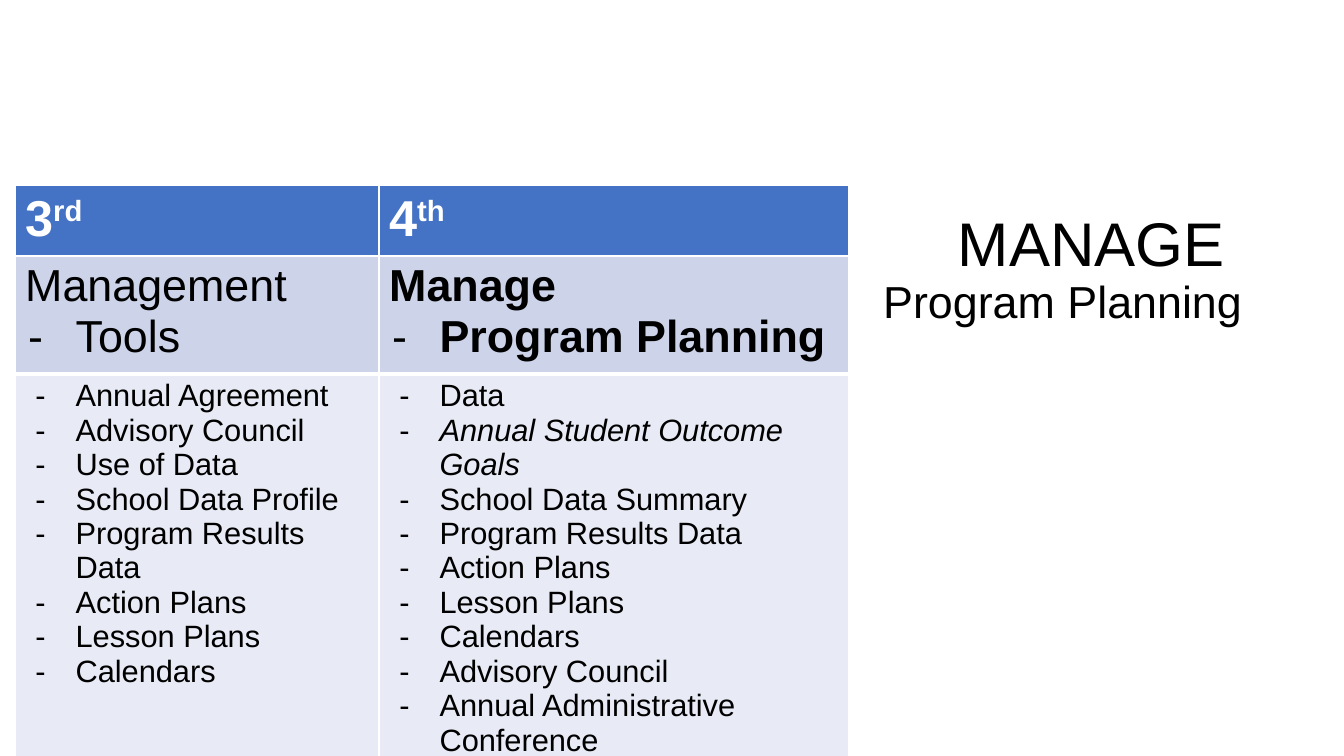
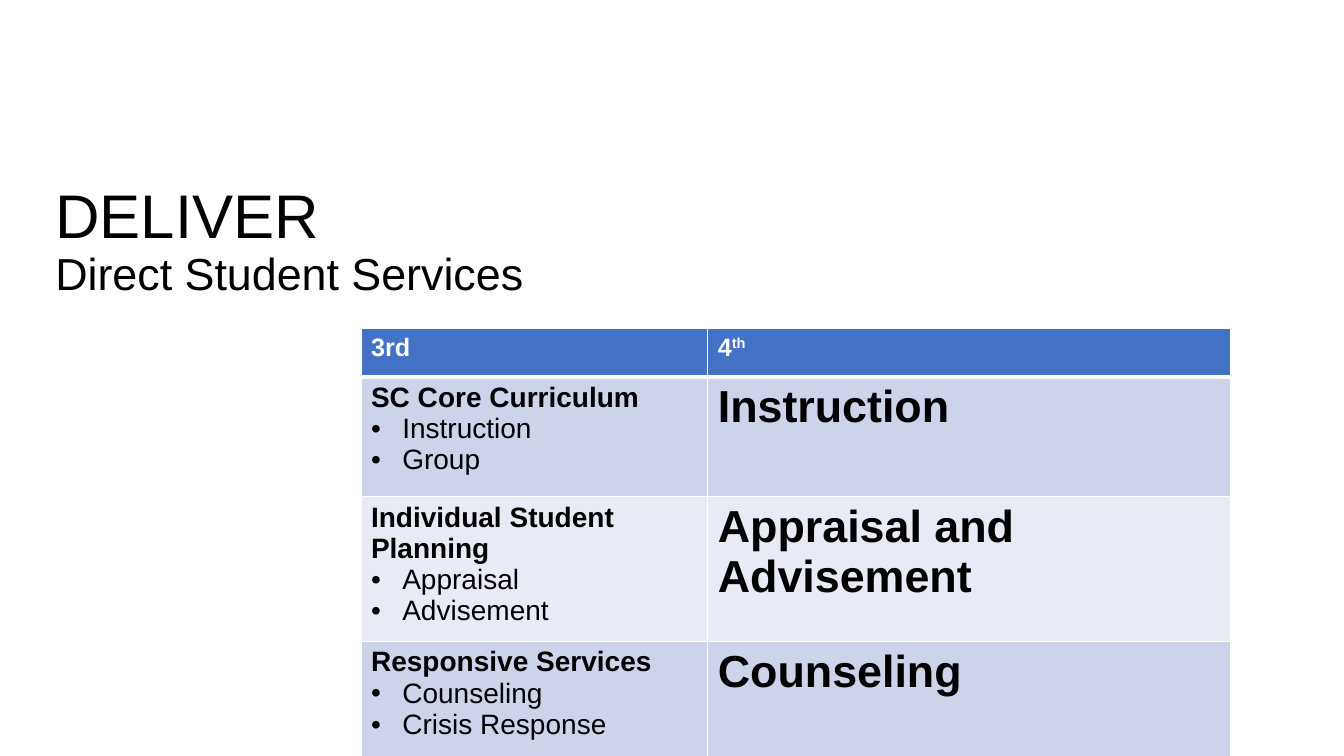
"""Build two slides comparing the third and fourth editions of a program model."""
from pptx import Presentation
from pptx.dml.color import RGBColor
from pptx.enum.text import MSO_ANCHOR, PP_ALIGN
from pptx.oxml.ns import qn
from pptx.util import Inches, Pt
from lxml.etree import SubElement

COLORS = {"text": "000000", "header": "4472C4", "band": "CDD4EA",
          "light": "E8EBF5", "white": "FFFFFF"}
FONT = "Arial"
BULLETS = {"heading dash": ("-", 0.5, 0.47), "dash": ("-", 0.5, 0.4),
           "dot": ("•", 0.31, 0.31)}


def add_run(paragraph, text, size, style="", color="text"):
    run = paragraph.add_run()
    run.text = text
    run.font.name = FONT
    run.font.size = Pt(size)
    run.font.bold = style == "bold"
    run.font.italic = style == "italic"
    run.font.color.rgb = RGBColor.from_string(COLORS[color])
    return run


def fill_cell(cell, fill, paragraphs, top_width, bottom_width):
    properties = cell._tc.get_or_add_tcPr()
    for side, width in (("L", 1), ("R", 1), ("T", top_width), ("B", bottom_width)):
        line = SubElement(properties, qn(f"a:ln{side}"), w=str(Pt(width)))
        line_fill = SubElement(line, qn("a:solidFill"))
        SubElement(line_fill, qn("a:srgbClr"), val=COLORS["white"])
    cell.fill.solid()
    cell.fill.fore_color.rgb = RGBColor.from_string(COLORS[fill])
    frame = cell.text_frame
    for index, (text, size, style, bullet) in enumerate(paragraphs):
        paragraph = frame.add_paragraph() if index else frame.paragraphs[0]
        if bullet:
            character, left, hanging = BULLETS[bullet]
            settings = paragraph._p.get_or_add_pPr()
            settings.set("marL", str(Inches(left)))
            settings.set("indent", str(-Inches(hanging)))
            SubElement(settings, qn("a:buFont"), typeface=FONT)
            SubElement(settings, qn("a:buChar"), char=character)
        color = "white" if fill == "header" else "text"
        base, _, ordinal = text.partition("^")
        add_run(paragraph, base, size, style, color)
        if ordinal:
            run = add_run(paragraph, ordinal, size, style, color)
            run._r.get_or_add_rPr().set("baseline", "30000")


third_tools = ["Annual Agreement", "Advisory Council", "Use of Data",
               "School Data Profile", "Program Results Data", "Action Plans",
               "Lesson Plans", "Calendars"]
fourth_tools = ["Data", "Annual Student Outcome Goals", "School Data Summary",
                "Program Results Data", "Action Plans", "Lesson Plans", "Calendars",
                "Advisory Council", "Annual Administrative Conference"]
manage_rows = [
    [[("3^rd", 36, "bold", None)], [("4^th", 36, "bold", None)]],
    [[("Management", 32, "", None), ("Tools", 32, "", "heading dash")],
     [("Manage", 32, "bold", None), ("Program Planning", 32, "bold", "heading dash")]],
    [[(tool, 22, "italic" if tool == "Annual Student Outcome Goals" else "", "dash")
      for tool in tools] for tools in (third_tools, fourth_tools)],
]

services = [
    ("SC Core Curriculum", ["Instruction", "Group"], "Instruction"),
    ("Individual Student Planning", ["Appraisal", "Advisement"],
     "Appraisal and Advisement"),
    ("Responsive Services", ["Counseling", "Crisis Response"], "Counseling"),
]
deliver_rows = [[[("3rd", 18, "bold", None)], [("4^th", 18, "bold", None)]]]
for heading, items, replacement in services:
    deliver_rows.append([
        [(heading, 20, "bold", None)] + [(item, 20, "", "dot") for item in items],
        [(replacement, 32, "bold", None)],
    ])

slides = [
    {"title": ("MANAGE ", "Program Planning"), "title_at": (0.92, 1.96),
     "align": PP_ALIGN.RIGHT, "table_at": (0.15, 1.84), "columns": (3.61, 4.66),
     "heights": (0.58, 0.99, 0.99), "rows": manage_rows, "thick_after": 1},
    {"title": ("DELIVER", "Direct Student Services"), "title_at": (0.45, 1.68),
     "align": PP_ALIGN.LEFT, "table_at": (3.58, 3.26), "columns": (3.44, 5.19),
     "heights": (0.48, 1.19, 1.25, 1.19), "rows": deliver_rows, "thick_after": 0},
]

presentation = Presentation()
presentation.slide_width = Inches(13.33)
presentation.slide_height = Inches(7.5)

for content in slides:
    slide = presentation.slides.add_slide(presentation.slide_layouts[6])

    left, top = content["title_at"]
    title = slide.shapes.add_textbox(Inches(left), Inches(top), Inches(11.5), Inches(1.45))
    title.text_frame.word_wrap = True
    title.text_frame.vertical_anchor = MSO_ANCHOR.MIDDLE
    paragraph = title.text_frame.paragraphs[0]
    paragraph.alignment = content["align"]
    paragraph.line_spacing = 0.9
    heading, subtitle = content["title"]
    add_run(paragraph, heading, 44)
    paragraph.add_line_break()
    add_run(paragraph, subtitle, 32)

    left, top = content["table_at"]
    columns, heights = content["columns"], content["heights"]
    table = slide.shapes.add_table(
        len(heights), len(columns), Inches(left), Inches(top),
        Inches(sum(columns)), Inches(sum(heights))).table
    for column, width in zip(table.columns, columns):
        column.width = Inches(width)
    for row_index, row in enumerate(content["rows"]):
        table.rows[row_index].height = Inches(heights[row_index])
        fill = "header" if row_index == 0 else ("light", "band")[row_index % 2]
        top_width = 3 if row_index == content["thick_after"] + 1 else 1
        bottom_width = 3 if row_index == content["thick_after"] else 1
        for column_index, paragraphs in enumerate(row):
            fill_cell(table.cell(row_index, column_index), fill, paragraphs,
                      top_width, bottom_width)

presentation.save("out.pptx")
